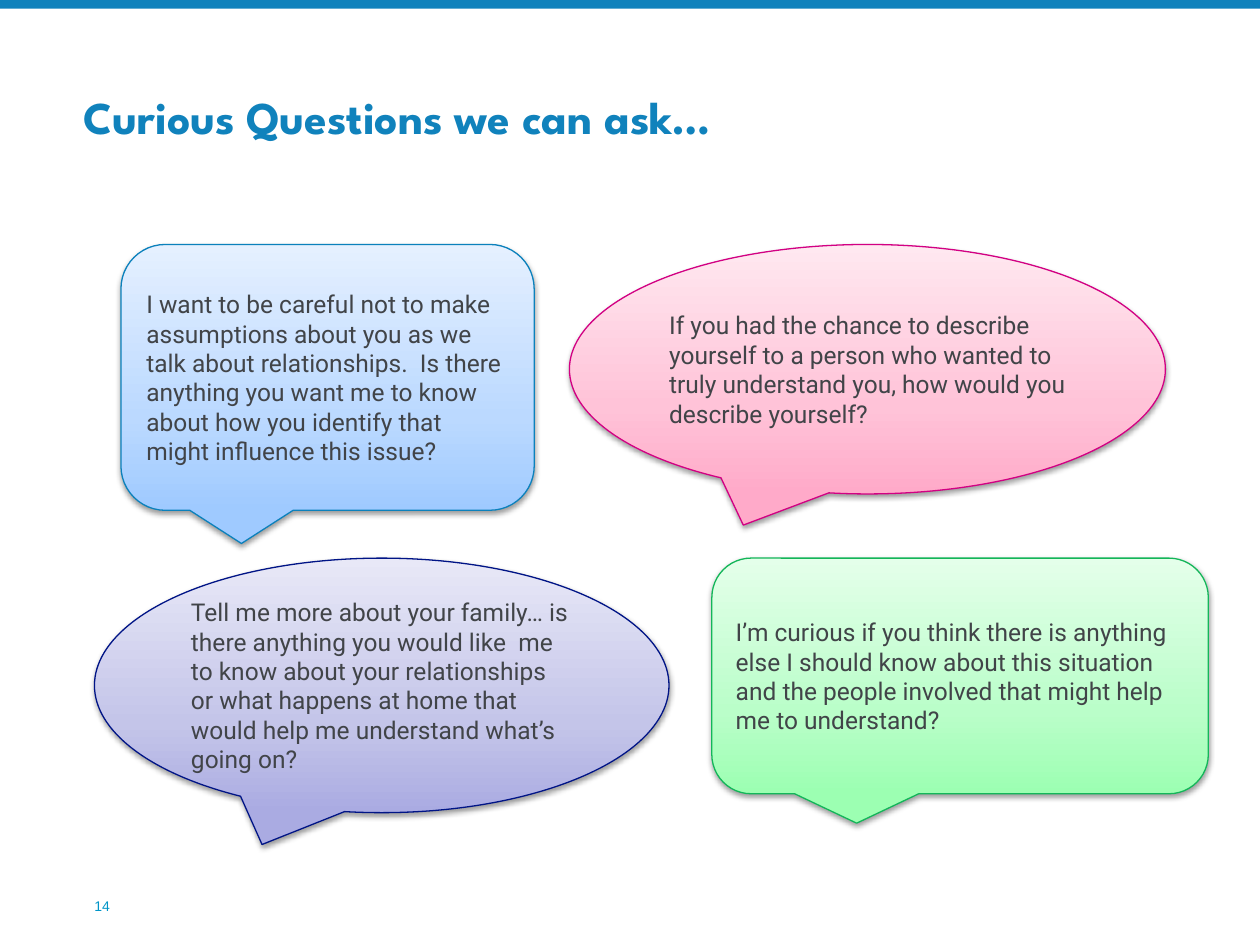
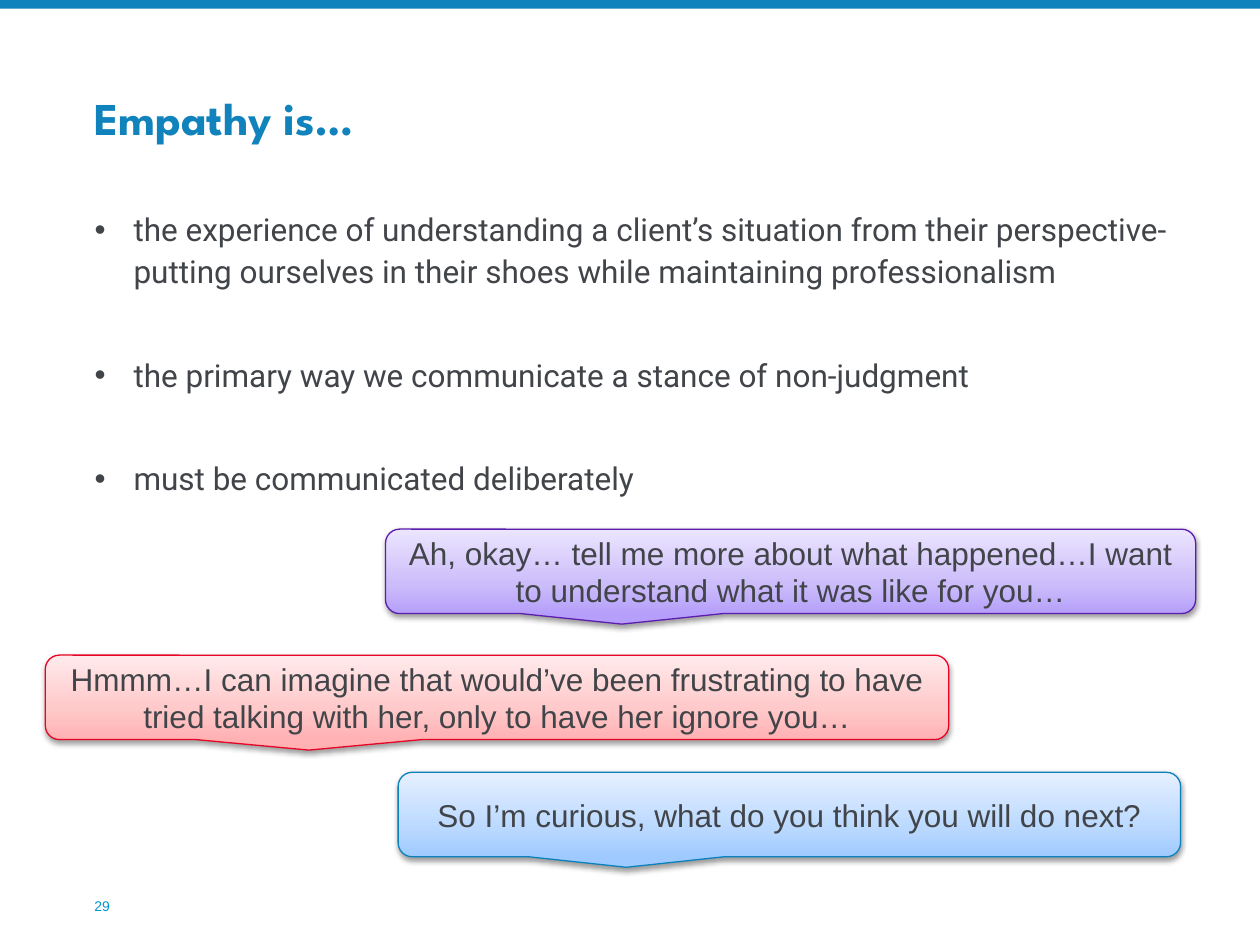
import copy

import pptx
import pptx.dml.color
import pptx.enum.shapes
import pptx.enum.text
import pptx.oxml
import pptx.oxml.ns
import pptx.util
from pptx.util import Inches, Pt

BRAND_BLUE = "1082BC"
NUMBER_BLUE = "0095C8"
TEXT_GREY = "414448"

# Outline colour, then gradient colours from bottom to top
BLUE = ("0B81BC", ("9FCAFF", "BBD9FF", "E5F0FF"))
PINK = ("D20083", ("FFAAC9", "FFC3D8", "FFE8F0"))
GREEN = ("13B659", ("9CFFB2", "BAFEC9", "E4FFEA"))
INDIGO = ("001486", ("AAABE2", "C4C5E9", "E8E8F7"))
PURPLE = ("5D1DAF", ("B69FFA", "CCBDFA", "EBE5FE"))
RED = ("E70425", ("FFB1B3", "FFC8C9", "FFEAEB"))
GRADIENT_POSITIONS = (0, 0.35, 1)

ROUNDED = pptx.enum.shapes.MSO_SHAPE.ROUNDED_RECTANGULAR_CALLOUT
OVAL = pptx.enum.shapes.MSO_SHAPE.OVAL_CALLOUT
LEFT = pptx.enum.text.PP_ALIGN.LEFT
CENTER = pptx.enum.text.PP_ALIGN.CENTER
TOP = pptx.enum.text.MSO_ANCHOR.TOP
MIDDLE = pptx.enum.text.MSO_ANCHOR.MIDDLE
BOTTOM = pptx.enum.text.MSO_ANCHOR.BOTTOM

SHADOW_XML = (
    f'<a:outerShdw {pptx.oxml.ns.nsdecls("a")} blurRad="{Pt(3.1)}" dist="{Pt(1.6)}" '
    'dir="5400000" rotWithShape="0"><a:srgbClr val="000000"><a:alpha val="38000"/>'
    "</a:srgbClr></a:outerShdw>"
)


def color(hex_code):
    return pptx.dml.color.RGBColor.from_string(hex_code)


def style(paragraph, font_name, size, hex_code, bold=False, align=LEFT):
    paragraph.alignment = align
    font = paragraph.font
    font.name, font.size, font.bold = font_name, Pt(size), bold
    font.color.rgb = color(hex_code)


def add_text_box(page, area, anchor):
    """Add a wrapping text box without insets and return its text frame."""
    frame = page.shapes.add_textbox(*map(Inches, area)).text_frame
    frame.word_wrap = True
    frame.vertical_anchor = anchor
    frame.margin_left = frame.margin_right = frame.margin_top = frame.margin_bottom = 0
    return frame


def add_line(page, area, text, font_name, size, hex_code, bold=False):
    """Add one bottom-anchored line of text."""
    para = add_text_box(page, area, BOTTOM).paragraphs[0]
    para.text = text
    style(para, font_name, size, hex_code, bold)


def add_page(deck, title, title_left, title_top, number):
    """Add a blank page with the top band, the title and the page number."""
    page = deck.slides.add_slide(deck.slide_layouts[6])
    band = page.shapes.add_shape(
        pptx.enum.shapes.MSO_SHAPE.RECTANGLE, 0, 0, deck.slide_width, Inches(0.07))
    band.shadow.inherit = False
    band.fill.solid()
    band.fill.fore_color.rgb = color(BRAND_BLUE)
    band.line.fill.background()
    add_line(page, (title_left, title_top, 8.5, 0.62), title,
             "League Spartan", 26, BRAND_BLUE, bold=True)
    add_line(page, (0.75, 7.06, 0.24, 0.2), str(number), "Arial", 8, NUMBER_BLUE)
    return page


def fill_gradient(shape, hex_codes):
    """Fill the shape with three colours running from bottom to top."""
    shape.fill.gradient()
    shape.fill.gradient_angle = 90
    stop_list = shape.element.spPr.find(".//" + pptx.oxml.ns.qn("a:gsLst"))
    stop_list.insert(1, copy.deepcopy(stop_list[0]))
    for stop, position, hex_code in zip(
            shape.fill.gradient_stops, GRADIENT_POSITIONS, hex_codes):
        stop.position = position
        stop.color.rgb = color(hex_code)


def add_bubble(page, kind, area, palette, text, font_name, size, align):
    """Add a speech bubble with a gradient, an outline and a soft shadow."""
    outline, gradient = palette
    bubble = page.shapes.add_shape(kind, *map(Inches, area))
    fill_gradient(bubble, gradient)
    bubble.line.color.rgb = color(outline)
    bubble.line.width = Pt(0.75)
    bubble.shadow.inherit = False
    effects = bubble.element.spPr.find(pptx.oxml.ns.qn("a:effectLst"))
    effects.append(pptx.oxml.parse_xml(SHADOW_XML))
    frame = bubble.text_frame
    frame.word_wrap = True
    frame.vertical_anchor = MIDDLE
    para = frame.paragraphs[0]
    para.text = text
    style(para, font_name, size, TEXT_GREY, align=align)


def add_bullets(page, area, items):
    frame = add_text_box(page, area, TOP)
    for index, item in enumerate(items):
        para = frame.add_paragraph() if index else frame.paragraphs[0]
        para.text = item
        style(para, "Roboto", 18, TEXT_GREY)
        para.line_spacing = 1.1
        para.space_before = Pt(35.5 if index else 0)
        properties = para._p.get_or_add_pPr()
        properties.set("marL", str(Inches(0.31)))
        properties.set("indent", str(-Inches(0.31)))
        for tag, attribute, value in (("buFont", "typeface", "Arial"), ("buChar", "char", "•")):
            bullet = pptx.oxml.parse_xml(
                f'<a:{tag} {pptx.oxml.ns.nsdecls("a")} {attribute}="{value}"/>')
            properties.insert_element_before(bullet, "a:tabLst", "a:defRPr", "a:extLst")


def build_questions(deck):
    page = add_page(deck, "Curious Questions we can ask…", 0.66, 0.52, 14)
    questions = (
        (ROUNDED, (0.96, 1.94, 3.28, 2.11), BLUE,
         "I want to be careful not to make assumptions about you as we talk about "
         "relationships.  Is there anything you want me to know about how you identify "
         "that might influence this issue?"),
        (OVAL, (4.52, 1.94, 4.73, 1.98), PINK,
         "If you had the chance to describe yourself to a person who wanted to truly "
         "understand you, how would you describe yourself?"),
        (ROUNDED, (5.65, 4.43, 3.94, 1.87), GREEN,
         "I’m curious if you think there is anything else I should know about this "
         "situation and the people involved that might help me to understand?"),
        (OVAL, (0.75, 4.43, 4.56, 2.02), INDIGO,
         "Tell me more about your family… is there anything you would like  me to know "
         "about your relationships or what happens at home that would help me understand "
         "what’s going on?"),
    )
    for kind, area, palette, text in questions:
        add_bubble(page, kind, area, palette, text, "Roboto", 14, LEFT)


def build_empathy(deck):
    page = add_page(deck, "Empathy is…", 0.75, 0.53, 29)
    add_bullets(page, (0.75, 1.64, 8.92, 2.4), (
        "the experience of understanding a client’s situation from their perspective- "
        "putting ourselves in their shoes while maintaining professionalism",
        "the primary way we communicate a stance of non-judgment",
        "must be communicated deliberately",
    ))
    replies = (
        (3.06, 4.2, 6.43, PURPLE,
         "Ah, okay… tell me more about what happened…I want to understand what it was "
         "like for you…"),
        (0.36, 5.2, 7.17, RED,
         "Hmmm…I can imagine that would’ve been frustrating to have tried talking with "
         "her, only to have her ignore you…"),
        (3.16, 6.13, 6.21, BLUE, "So I’m curious, what do you think you will do next?"),
    )
    for left, top, width, palette, text in replies:
        add_bubble(page, ROUNDED, (left, top, width, 0.67), palette, text,
                   "Arial", 18, CENTER)


def main():
    deck = pptx.Presentation()
    deck.slide_width, deck.slide_height = Inches(10), Inches(7.5)
    build_questions(deck)
    build_empathy(deck)
    deck.save("out.pptx")


if __name__ == "__main__":
    main()
